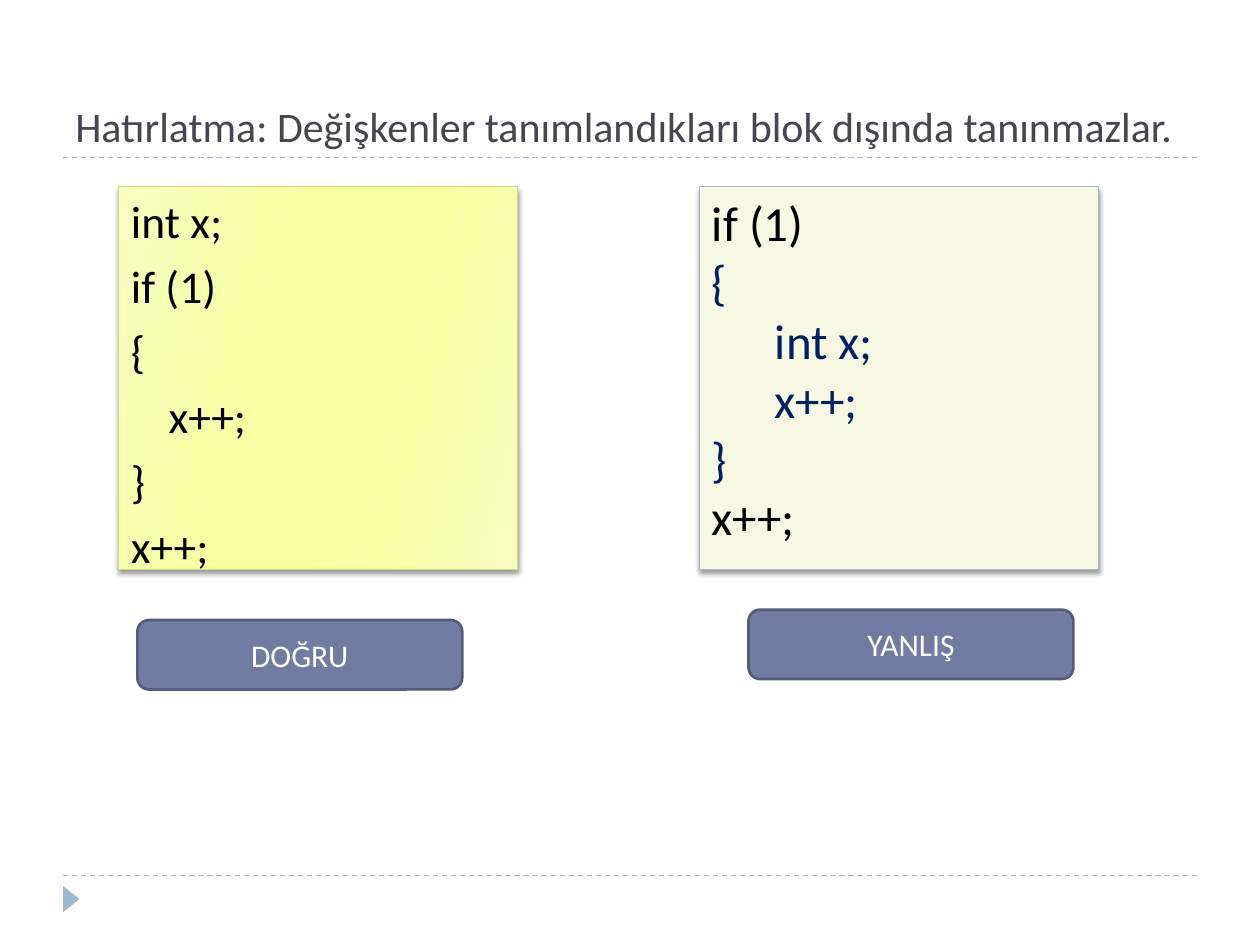
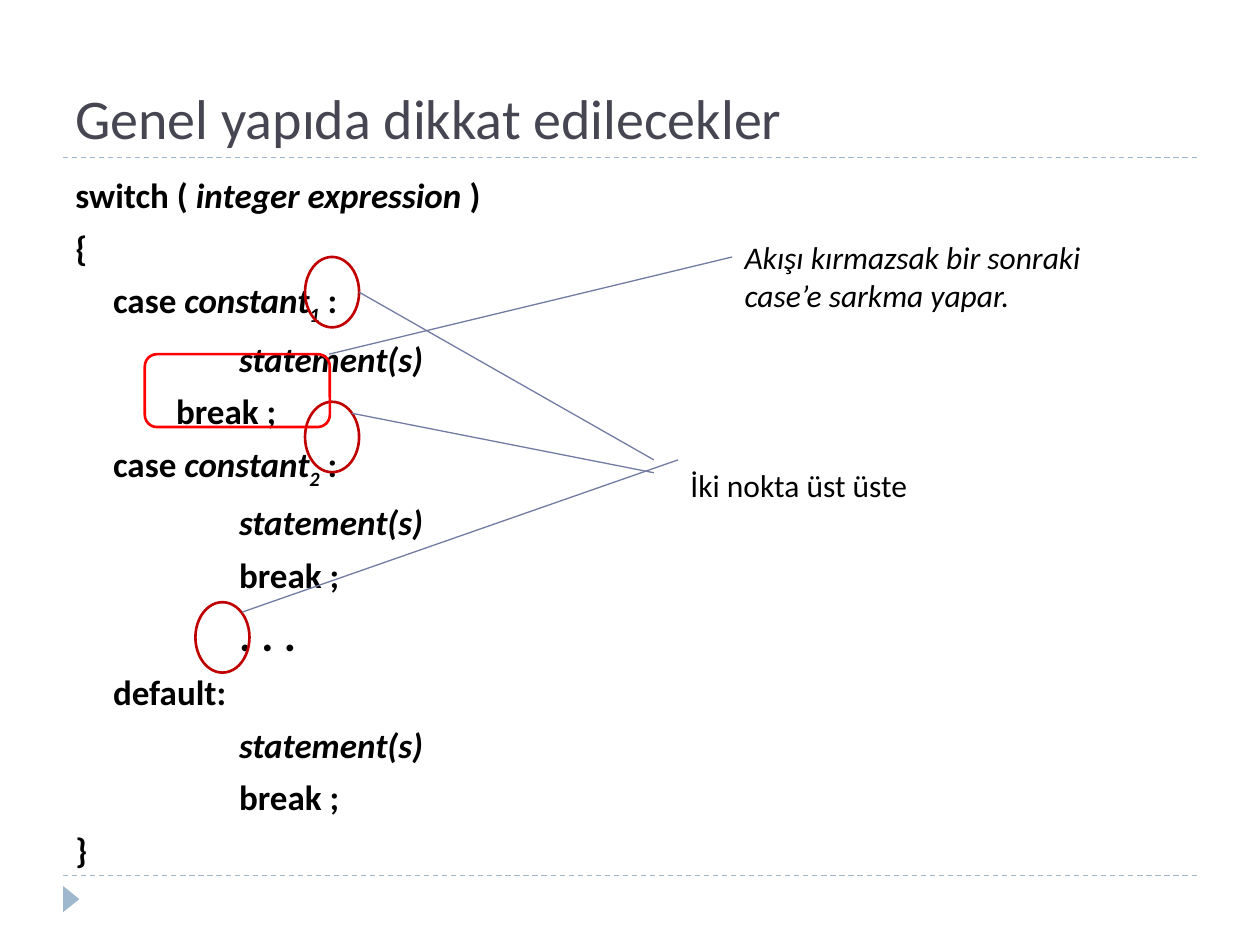
from lxml.etree import SubElement
from pptx import Presentation
from pptx.dml.color import RGBColor
from pptx.enum.dml import MSO_LINE
from pptx.enum.shapes import MSO_CONNECTOR, MSO_SHAPE
from pptx.enum.text import MSO_ANCHOR, PP_ALIGN
from pptx.oxml import parse_xml
from pptx.oxml.ns import nsdecls, qn
from pptx.util import Cm, Pt

FONT = "Calibri"
COLORS = {
    "title": "464653", "text": "000000", "block": "002060", "white": "FFFFFF",
    "rule": "9FB8CD", "accent": "727CA3", "accent_edge": "545C79",
    "cream": "F6F8E4", "lime_edge": "D2DA7A",
    "colon_ring": "C00000", "break_frame": "FF0000",
}
LIME_STOPS = [(0, "F8FEC2"), (30, "F6FFA7"), (45, "F6FF9F"),
              (55, "F6FF9F"), (73, "F6FFA7"), (100, "F8FEC2")]
CASE_INDENT, BREAK_INDENT, STATEMENT_INDENT = 0.76, 2.03, 3.3


def color(name):
    """Return the named colour."""
    return RGBColor.from_string(COLORS[name])


def add_line(slide, start, end, line_color="accent", dash=None):
    """Draw a thin straight line between two points in centimetres."""
    line = slide.shapes.add_connector(
        MSO_CONNECTOR.STRAIGHT, *map(Cm, (*start, *end)))
    line.line.color.rgb = color(line_color)
    line.line.width = Pt(0.75)
    if dash:
        line.line.dash_style = dash
    SubElement(line._element.spPr, qn("a:effectLst"))


def add_outline(slide, kind, box, edge=None, width=1.5, fill=None):
    """Add a preset shape with an optional edge and fill."""
    shape = slide.shapes.add_shape(kind, *map(Cm, box))
    shape.shadow.inherit = False
    if fill:
        shape.fill.solid()
        shape.fill.fore_color.rgb = color(fill)
    else:
        shape.fill.background()
    if edge:
        shape.line.color.rgb = color(edge)
        shape.line.width = Pt(width)
    else:
        shape.line.fill.background()
    return shape


def write_lines(frame, lines, size, ink="text", bold=None, italic=None,
                space=0, align=PP_ALIGN.LEFT):
    """Write (indent, runs, changes) lines, each run being (text, style)."""
    frame.word_wrap = True
    for number, (indent, runs, changes) in enumerate(lines):
        paragraph = frame.add_paragraph() if number else frame.paragraphs[0]
        paragraph.alignment = align
        paragraph.space_before = Pt(space)
        paragraph._p.get_or_add_pPr().set("marL", str(Cm(indent)))
        font = paragraph.font
        font.name, font.bold, font.italic = FONT, bold, italic
        font.size = Pt(changes.get("size", size))
        font.color.rgb = color(changes.get("ink", ink))
        for text, style in runs:
            run = paragraph.add_run()
            run.text = text
            if "italic" in style:
                run.font.italic = True
            if "sub" in style:
                run._r.get_or_add_rPr().set("baseline", "-25000")


def plain(text, indent=0, **changes):
    """Return a line of one unstyled run."""
    return indent, [(text, "")], changes


def case_label(number):
    """Return a case line whose constant carries a subscript number."""
    return CASE_INDENT, [("case ", ""), ("constant", "italic"),
                         (str(number), "italic sub"), (" :", "")], {}


def add_text(slide, box, lines, size, anchor=MSO_ANCHOR.TOP, **style):
    """Add a text box with the given lines."""
    frame = slide.shapes.add_textbox(*map(Cm, box)).text_frame
    frame.vertical_anchor = anchor
    write_lines(frame, lines, size, **style)


def add_slide(deck, title, title_size):
    """Add a blank slide with its rules, corner marker and title."""
    slide = deck.slides.add_slide(deck.slide_layouts[6])
    for height in (17.65, 3.18):
        add_line(slide, (1.27, height), (24.13, height), "rule", MSO_LINE.DASH)
    marker = add_outline(slide, MSO_SHAPE.ISOSCELES_TRIANGLE,
                         (1.17, 17.96, 0.53, 0.33), fill="rule")
    marker.rotation = 90
    add_text(slide, (1.27, 0.43, 22.86, 2.74), [plain(title)], title_size,
             MSO_ANCHOR.BOTTOM, ink="title")
    return slide


def add_code_card(slide, left, edge, lines, size, space=0):
    """Add a shadowed card of code."""
    card = add_outline(slide, MSO_SHAPE.RECTANGLE, (left, 3.76, 8.05, 7.72),
                       edge, 0.75, "cream")
    effects = card._element.spPr.find(qn("a:effectLst"))
    effects.append(parse_xml(
        f'<a:outerShdw {nsdecls("a")} blurRad="{Pt(3)}" dist="{Pt(2)}" '
        'dir="5400000" rotWithShape="0"><a:srgbClr val="000000">'
        '<a:alpha val="40000"/></a:srgbClr></a:outerShdw>'))
    card.text_frame.vertical_anchor = MSO_ANCHOR.TOP
    write_lines(card.text_frame, lines, size, space=space)
    return card


def fill_lime(card):
    """Give a card the lime gradient."""
    stops = "".join(
        f'<a:gs pos="{position * 1000}"><a:srgbClr val="{shade}"/></a:gs>'
        for position, shade in LIME_STOPS)
    gradient = parse_xml(
        f'<a:gradFill {nsdecls("a")} rotWithShape="1"><a:gsLst>{stops}</a:gsLst>'
        '<a:lin ang="960000" scaled="0"/></a:gradFill>')
    properties = card._element.spPr
    properties.replace(properties.find(qn("a:solidFill")), gradient)


def add_verdict(slide, left, top, text):
    """Add a rounded verdict label."""
    verdict = add_outline(slide, MSO_SHAPE.ROUNDED_RECTANGLE,
                          (left, top, 6.55, 1.4), "accent_edge", fill="accent")
    write_lines(verdict.text_frame, [plain(text)], 18, "white",
                align=PP_ALIGN.CENTER)


def build_scope_slide(deck):
    """Compare right and wrong variable scope."""
    slide = add_slide(
        deck, "Hatırlatma: Değişkenler tanımlandıkları blok dışında tanınmazlar.", 24)
    right_code = [plain("int x;"), plain("if (1)"), plain("{"),
                  plain("x++;", 0.76), plain("}"), plain("x++;")]
    wrong_code = [plain("if (1)"), plain("{", ink="block"),
                  plain("int x;", 1.27, ink="block"),
                  plain("x++;", 1.27, ink="block"),
                  plain("}", ink="block"), plain("x++;")]
    fill_lime(add_code_card(slide, 2.39, "lime_edge", right_code, 26, 6))
    add_code_card(slide, 14.1, "rule", wrong_code, 28)
    add_verdict(slide, 2.77, 12.5, "DOĞRU")
    add_verdict(slide, 15.09, 12.29, "YANLIŞ")


def build_switch_slide(deck):
    """Annotate the general form of a switch statement."""
    slide = add_slide(deck, "Genel yapıda dikkat edilecekler", 32)
    statements = (STATEMENT_INDENT, [("statement(s)", "italic")], {})
    break_line = plain("break ;", STATEMENT_INDENT)
    switch_code = [
        (0, [("switch ( ", ""), ("integer expression ", "italic"), (")", "")], {}),
        plain("{"),
        case_label(1), statements, plain("break ;", BREAK_INDENT),
        case_label(2), statements, break_line,
        plain(". . .", STATEMENT_INDENT, size=26),
        plain("default:", CASE_INDENT), statements, break_line,
        plain("}"),
    ]
    add_text(slide, (1.27, 3.38, 22.86, 13.72), switch_code, 20,
             bold=True, space=6)

    for left, top in ((6.15, 5.18), (6.15, 8.1), (3.94, 12.14)):
        add_outline(slide, MSO_SHAPE.OVAL, (left, top, 1.09, 1.42), "colon_ring")
    for start, end in (((4.88, 12.34), (13.67, 9.27)),
                       ((7.09, 8.33), (13.18, 9.53)),
                       ((7.24, 5.89), (13.18, 9.27))):
        add_line(slide, start, end)
    add_text(slide, (13.67, 9.27, 5.51, 1.02), [plain("İki nokta üst üste")], 18)

    add_outline(slide, MSO_SHAPE.ROUNDED_RECTANGLE, (2.92, 7.14, 3.73, 1.47),
                "break_frame")
    add_line(slide, (6.63, 7.14), (14.76, 5.18))
    add_text(slide, (14.76, 4.67, 8.36, 1.8),
             [plain("Akışı kırmazsak bir sonraki"), plain("case’e sarkma yapar.")],
             18, italic=True)


def main():
    """Build and save the deck."""
    deck = Presentation()
    deck.slide_width, deck.slide_height = Cm(25.4), Cm(19.05)
    build_scope_slide(deck)
    build_switch_slide(deck)
    deck.save("out.pptx")


if __name__ == "__main__":
    main()
